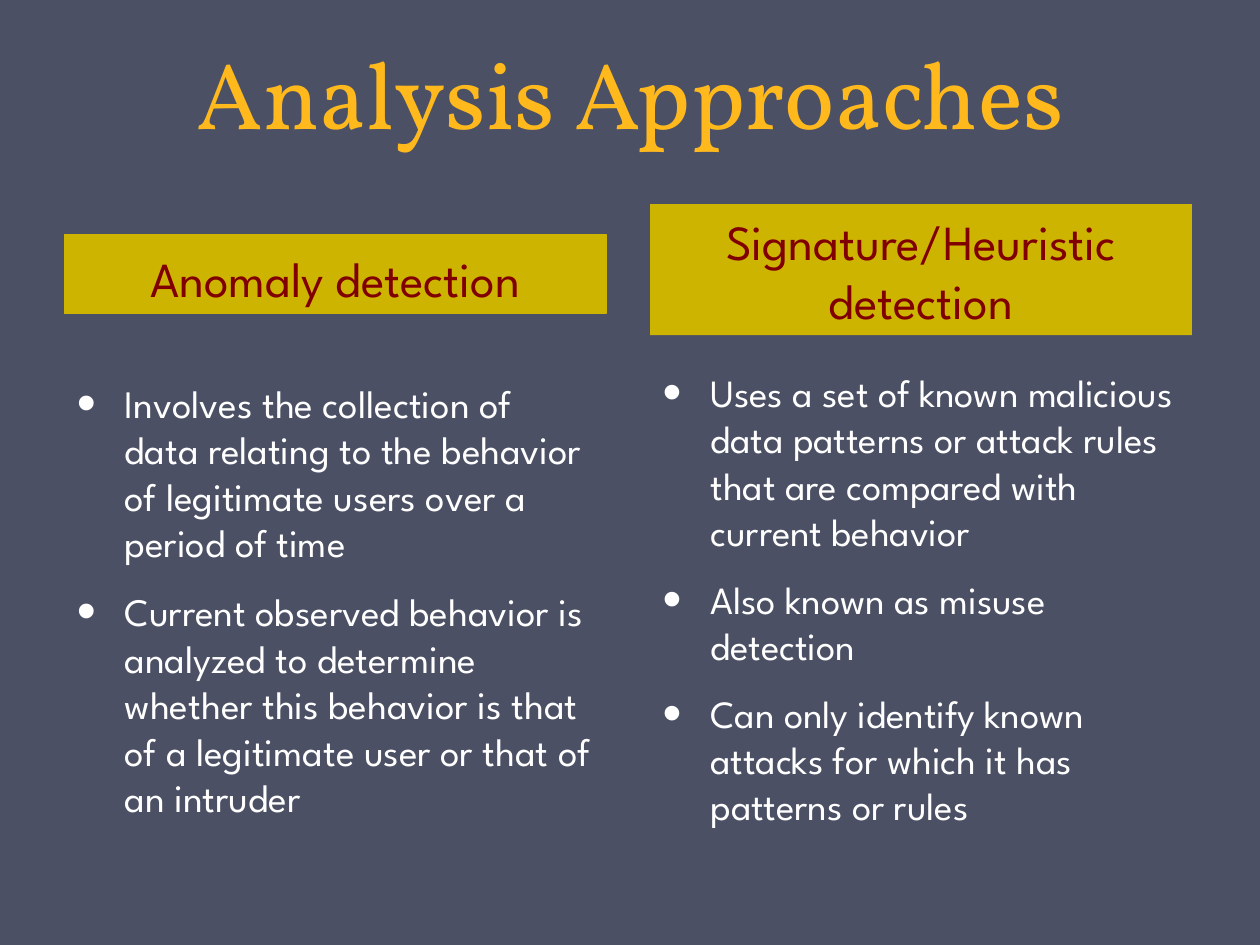
from lxml.etree import SubElement
from pptx import Presentation
from pptx.dml.color import RGBColor
from pptx.enum.text import MSO_ANCHOR, MSO_AUTO_SIZE, PP_ALIGN
from pptx.oxml.ns import qn
from pptx.util import Inches, Pt

BACKGROUND = RGBColor(0x4B, 0x50, 0x64)
GOLD = RGBColor(0xFF, 0xB9, 0x1D)
MUSTARD = RGBColor(0xCC, 0xB4, 0x00)
MAROON = RGBColor(0x80, 0x00, 0x00)
WHITE = RGBColor(0xFF, 0xFF, 0xFF)
TITLE_FONT = "Vollkorn"
BODY_FONT = "League Spartan"
COLUMN_WIDTH = 4.3


def place(shape, box, anchor):
    shape.left, shape.top, shape.width, shape.height = map(Inches, box)
    frame = shape.text_frame
    frame.word_wrap = True
    frame.auto_size = MSO_AUTO_SIZE.NONE
    frame.vertical_anchor = anchor
    return frame


def add_run(paragraph, text, font_name, size, color):
    run = paragraph.add_run()
    run.text = text
    run.font.name = font_name
    run.font.size = Pt(size)
    run.font.bold = False
    run.font.color.rgb = color


def add_bullet(paragraph):
    properties = paragraph._p.get_or_add_pPr()
    properties.set("marL", str(Inches(0.38)))
    properties.set("indent", str(Inches(-0.38)))
    SubElement(properties, qn("a:buSzPct")).set("val", "140000")
    SubElement(properties, qn("a:buFont")).set("typeface", "Arial")
    SubElement(properties, qn("a:buChar")).set("char", "•")


def fill_title(shape, box, text):
    paragraph = place(shape, box, MSO_ANCHOR.BOTTOM).paragraphs[0]
    paragraph.alignment = PP_ALIGN.CENTER
    paragraph.line_spacing = Pt(58)
    add_run(paragraph, text, TITLE_FONT, 54, GOLD)


def fill_heading(shape, box, text):
    paragraph = place(shape, box, MSO_ANCHOR.BOTTOM).paragraphs[0]
    shape.fill.solid()
    shape.fill.fore_color.rgb = MUSTARD
    paragraph.alignment = PP_ALIGN.CENTER
    add_run(paragraph, text, BODY_FONT, 28, MAROON)


def fill_list(shape, box, items, size):
    frame = place(shape, box, MSO_ANCHOR.TOP)
    for index, item in enumerate(items):
        paragraph = frame.add_paragraph() if index else frame.paragraphs[0]
        paragraph.space_after = Pt(8)
        add_bullet(paragraph)
        add_run(paragraph, item, BODY_FONT, size, WHITE)


def main():
    presentation = Presentation()
    presentation.slide_width = Inches(10)
    presentation.slide_height = Inches(7.5)
    # The Comparison layout has a title and two heading-and-list columns
    slide = presentation.slides.add_slide(presentation.slide_layouts[4])
    slide.background.fill.solid()
    slide.background.fill.fore_color.rgb = BACKGROUND
    title, left_heading, left_list, right_heading, right_list = [
        slide.placeholders[index] for index in range(5)]

    fill_title(title, (0.5, 0, 9, 1.23), "Analysis Approaches")

    # Left column
    fill_heading(left_heading, (0.51, 1.86, COLUMN_WIDTH, 0.63), "Anomaly detection")
    left_heading.line.color.rgb = MUSTARD
    left_heading.line.width = Pt(0.75)
    fill_list(left_list, (0.51, 2.96, COLUMN_WIDTH, 4.19), [
        "Involves the collection of data relating to the behavior of "
        "legitimate users over a period of time",
        "Current observed behavior is analyzed to determine whether this "
        "behavior is that of a legitimate user or that of an intruder",
    ], 22.2)

    # Right column
    fill_heading(right_heading, (5.16, 1.62, COLUMN_WIDTH, 1.04),
                 "Signature/Heuristic detection")
    fill_list(right_list, (5.16, 2.88, COLUMN_WIDTH, 3.77), [
        "Uses a set of known malicious data patterns or attack rules that "
        "are compared with current behavior",
        "Also known as misuse detection",
        "Can only identify known attacks for which it has patterns or rules",
    ], 22)

    presentation.save("out.pptx")


if __name__ == "__main__":
    main()
